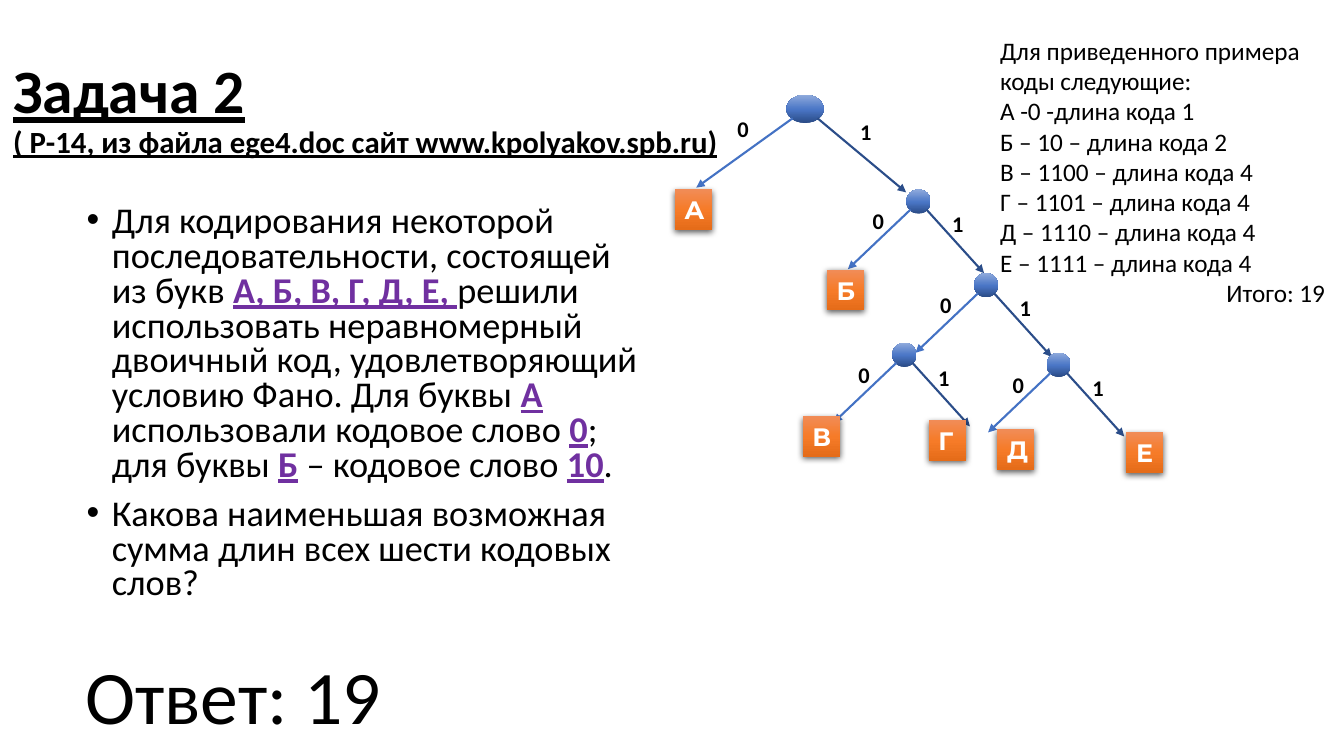
from dataclasses import dataclass

from pptx import Presentation
from pptx.dml.color import RGBColor
from pptx.enum.shapes import MSO_CONNECTOR, MSO_SHAPE
from pptx.enum.text import MSO_ANCHOR, MSO_AUTO_SIZE, PP_ALIGN
from pptx.oxml import parse_xml
from pptx.oxml.ns import nsdecls, qn
from pptx.util import Inches, Pt


@dataclass(frozen=True)
class Theme:
    font: str = "Calibri"
    leaf_font: str = "Montserrat"
    text: str = "000000"
    accent: str = "7030A0"
    leaf_text: str = "FFFFFF"
    zero_line: str = "4472C4"
    one_line: str = "2B4D89"
    node_stops: tuple = ((0, "2A4B86"), (48, "4A76C6"), (100, "8FAADC"))
    leaf_stops: tuple = ((0, "F18C57"), (50, "F67B28"), (100, "E56C19"))
    title_size: float = 44
    subtitle_size: float = 22
    body_size: float = 25.9
    bit_size: float = 16
    leaf_size: float = 18
    codes_size: float = 18
    answer_size: float = 54


THEME = Theme()

TASK = (
    (
        ("Для кодирования некоторой последовательности, состоящей из букв ", False),
        ("А, Б, В, Г, Д, Е, ", True),
        ("решили использовать неравномерный двоичный код, "
         "удовлетворяющий условию Фано. Для буквы ", False),
        ("А", True),
        (" использовали кодовое слово ", False),
        ("0", True),
        ("; для буквы ", False),
        ("Б", True),
        (" – кодовое слово ", False),
        ("10", True),
        (".", False),
    ),
    (("Какова наименьшая возможная сумма длин всех шести кодовых слов?", False),),
)

CODES = (
    "Для приведенного примера коды следующие:",
    "А -0 -длина кода 1",
    "Б – 10 – длина кода 2",
    "В – 1100 – длина кода 4",
    "Г – 1101 – длина кода 4",
    "Д – 1110 – длина кода 4",
    "Е – 1111 – длина кода 4",
)
TOTAL = "Итого: 19"

NODE_SIZE = 0.24
NODES = (
    (7.8, 0.94, 0.37, 0.28),
    (8.99, 1.88, NODE_SIZE, NODE_SIZE),
    (9.66, 2.71, NODE_SIZE, NODE_SIZE),
    (10.38, 3.5, NODE_SIZE, NODE_SIZE),
    (8.85, 3.4, NODE_SIZE, NODE_SIZE),
)
BRANCHES = (
    ("0", THEME.zero_line, (0.04, 0.2), (-0.58, 0.79), (-0.44, 0.13)),
    ("1", THEME.one_line, (0.2, 0.2), (0.77, 0.83), (0.35, 0.16)),
)
LEAVES = (
    ("А", 6.69, 1.88), ("Б", 8.2, 2.68), ("В", 7.96, 4.13),
    ("Г", 9.21, 4.17), ("Д", 9.89, 4.26), ("Е", 11.17, 4.29),
)


def apply_format(target, values):
    for name, value in values.items():
        setattr(target, name, value)


def place(shape, left, top, width, height):
    apply_format(shape, {"left": Inches(left), "top": Inches(top),
                         "width": Inches(width), "height": Inches(height)})


def add_run(paragraph, text, size, color=THEME.text, name=THEME.font, bold=False, underline=False):
    run = paragraph.add_run()
    run.text = text
    apply_format(run.font, {"size": Pt(size), "name": name, "bold": bold, "underline": underline})
    run.font.color.rgb = RGBColor.from_string(color)


def add_text(shapes, box, lines, size, wrap=True, bold=False):
    shape = shapes.add_textbox(*map(Inches, box))
    frame = shape.text_frame
    frame.word_wrap = wrap
    for index, (line, alignment) in enumerate(lines):
        paragraph = frame.paragraphs[0] if index == 0 else frame.add_paragraph()
        paragraph.alignment = alignment
        add_run(paragraph, line, size, bold=bold)


def add_gradient_shape(shapes, kind, box, stops, angle):
    shape = shapes.add_shape(kind, *map(Inches, box))
    shape.shadow.inherit = False
    shape.line.fill.background()
    shape.fill.gradient()
    stop_xml = "".join(
        f'<a:gs pos="{position * 1000}"><a:srgbClr val="{color}"/></a:gs>'
        for position, color in stops
    )
    gradient = parse_xml(
        f'<a:gradFill {nsdecls("a")} rotWithShape="1"><a:gsLst>{stop_xml}</a:gsLst>'
        f'<a:lin ang="{angle * 60000}" scaled="0"/></a:gradFill>'
    )
    properties = shape._element.spPr
    properties.replace(properties.find(qn("a:gradFill")), gradient)
    return shape


def add_arrow(shapes, start, end, color):
    arrow = shapes.add_connector(MSO_CONNECTOR.STRAIGHT, *map(Inches, start + end))
    arrow.line.width = Pt(1.5)
    arrow.line.color.rgb = RGBColor.from_string(color)
    arrow.line._get_or_add_ln().append(parse_xml(f'<a:tailEnd {nsdecls("a")} type="triangle"/>'))
    arrow._element.spPr.append(parse_xml(f'<a:effectLst {nsdecls("a")}/>'))


def add_node(slide, left, top, width, height):
    shapes = slide.shapes.add_group_shape().shapes
    add_gradient_shape(shapes, MSO_SHAPE.OVAL, (left, top, width, height), THEME.node_stops, 270)
    scale_x, scale_y = width / NODE_SIZE, height / NODE_SIZE

    def locate(offset):
        return left + offset[0] * scale_x, top + offset[1] * scale_y

    for bit, color, start, end, label in BRANCHES:
        add_arrow(shapes, locate(start), locate(end), color)
        label_box = (*locate(label), 0.32 * scale_x, 0.37 * scale_y)
        add_text(shapes, label_box, [(bit, PP_ALIGN.CENTER)], THEME.bit_size, wrap=False, bold=True)


def add_leaf(slide, letter, left, top):
    leaf = add_gradient_shape(slide.shapes, MSO_SHAPE.RECTANGLE, (left, top, 0.37, 0.4),
                              THEME.leaf_stops, 90)
    leaf._element.spPr.find(qn("a:effectLst")).append(parse_xml(
        f'<a:outerShdw {nsdecls("a")} blurRad="{Pt(4.5)}" dist="{Pt(1.5)}" dir="5400000" '
        'algn="ctr" rotWithShape="0"><a:srgbClr val="000000"><a:alpha val="63000"/>'
        '</a:srgbClr></a:outerShdw>'
    ))
    leaf.text_frame.vertical_anchor = MSO_ANCHOR.TOP
    paragraph = leaf.text_frame.paragraphs[0]
    paragraph.alignment = PP_ALIGN.LEFT
    add_run(paragraph, letter, THEME.leaf_size, THEME.leaf_text, THEME.leaf_font, bold=True)


def fill_title(title):
    place(title, 0.03, 0.37, 11.5, 1.45)
    apply_format(title.text_frame, {"auto_size": MSO_AUTO_SIZE.NONE, "word_wrap": True,
                                    "vertical_anchor": MSO_ANCHOR.MIDDLE})
    paragraph = title.text_frame.paragraphs[0]
    apply_format(paragraph, {"alignment": PP_ALIGN.LEFT, "line_spacing": 0.9})
    add_run(paragraph, "Задача 2", THEME.title_size, bold=True, underline=True)
    paragraph.add_line_break()
    add_run(paragraph, "( Р-14, из файла ege4.doc сайт www.kpolyakov.spb.ru)",
            THEME.subtitle_size, bold=True, underline=True)


def fill_task(body):
    place(body, 0.76, 1.99, 5.67, 4.76)
    frame = body.text_frame
    apply_format(frame, {"auto_size": MSO_AUTO_SIZE.NONE, "word_wrap": True})
    for index, segments in enumerate(TASK):
        paragraph = frame.paragraphs[0] if index == 0 else frame.add_paragraph()
        properties = paragraph._p.get_or_add_pPr()
        properties.set("marL", str(Inches(0.25)))
        properties.set("indent", str(Inches(-0.25)))
        properties.append(parse_xml(f'<a:buFont {nsdecls("a")} typeface="Arial"/>'))
        properties.append(parse_xml(f'<a:buChar {nsdecls("a")} char="•"/>'))
        apply_format(paragraph, {"line_spacing": 0.8, "space_before": Pt(10 if index else 0)})
        for text, marked in segments:
            add_run(paragraph, text, THEME.body_size, THEME.accent if marked else THEME.text,
                    bold=marked, underline=marked)


def main():
    presentation = Presentation()
    presentation.slide_width = Inches(13.33)
    presentation.slide_height = Inches(7.5)
    slide = presentation.slides.add_slide(presentation.slide_layouts[1])
    fill_title(slide.shapes.title)
    fill_task(slide.placeholders[1])
    for node in NODES:
        add_node(slide, *node)
    for leaf in LEAVES:
        add_leaf(slide, *leaf)
    code_lines = [(line, PP_ALIGN.LEFT) for line in CODES] + [(TOTAL, PP_ALIGN.RIGHT)]
    add_text(slide.shapes, (9.82, 0.3, 3.42, 2.83), code_lines, THEME.codes_size)
    add_text(slide.shapes, (0.73, 6.39, 3.17, 1.01), [("Ответ: 19", PP_ALIGN.CENTER)],
             THEME.answer_size, wrap=False)
    presentation.save("out.pptx")


if __name__ == "__main__":
    main()
